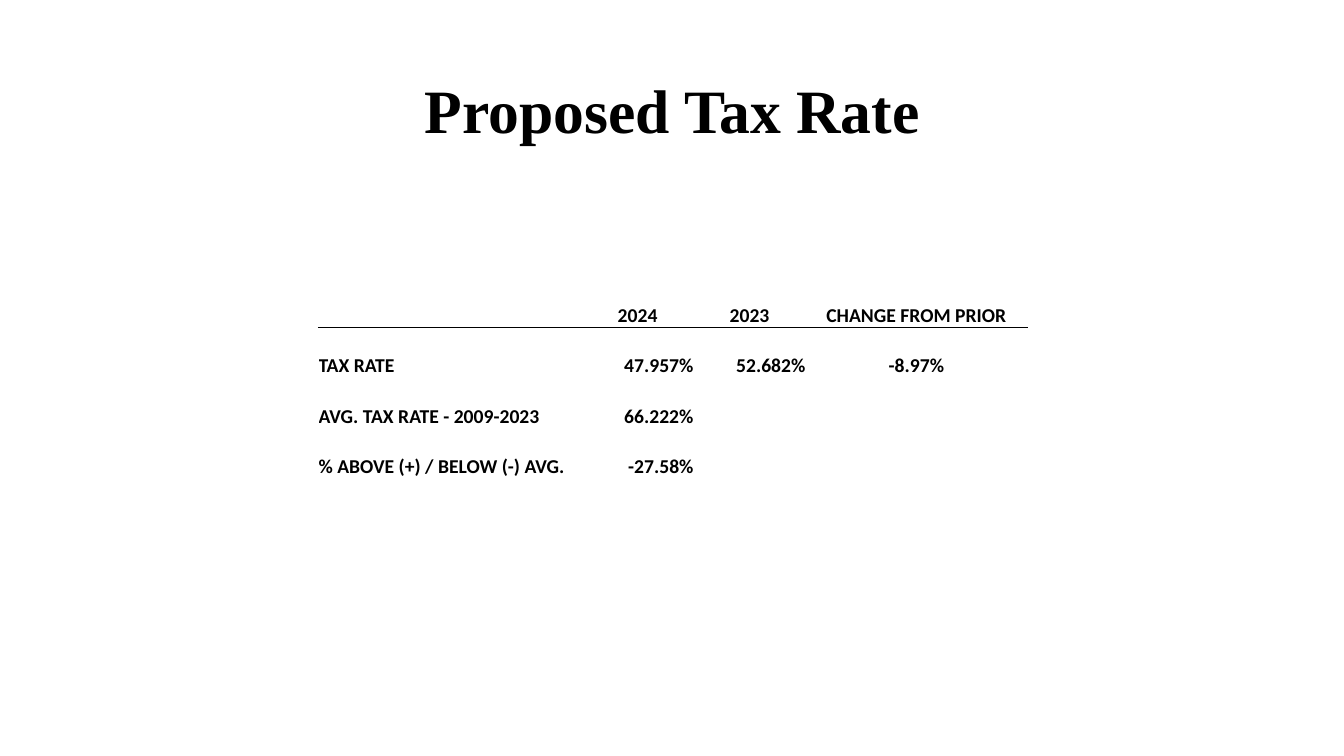
from lxml import etree
from pptx import Presentation, util as u
from pptx.dml.color import RGBColor
from pptx.enum import text
from pptx.oxml import ns

LEFT, CENTER, RIGHT = text.PP_ALIGN.LEFT, text.PP_ALIGN.CENTER, text.PP_ALIGN.RIGHT


def color(hex_value):
    return RGBColor.from_string(hex_value)


def set_all(target, values):
    for key, value in values.items():
        setattr(target, key, value)


class RateSlide:
    """Style and current slide; lengths are percentages of the slide size."""

    INK = "000000"
    TITLE_FONT = {"name": "Times New Roman", "size": u.Pt(44), "bold": True}
    TABLE_FONT = {"name": "Calibri", "size": u.Pt(14), "bold": True}
    CELL = {"margin_left": 0, "margin_right": 0, "margin_top": 0,
            "margin_bottom": 0, "vertical_anchor": text.MSO_ANCHOR.BOTTOM}

    def __init__(self, deck):
        self.width, self.height = deck.slide_width, deck.slide_height
        self.slide = deck.slides.add_slide(deck.slide_layouts[5])

    def x(self, percent):
        return round(self.width * percent / 100)

    def y(self, percent):
        return round(self.height * percent / 100)

    def line(self, paragraph, words, font, align):
        paragraph.text = words
        paragraph.alignment = align
        set_all(paragraph.font, font)
        paragraph.font.color.rgb = color(self.INK)

    def title(self, words, left, top, width, height):
        heading = self.slide.shapes.title
        set_all(heading, {"left": self.x(left), "top": self.y(top),
                          "width": self.x(width), "height": self.y(height)})
        set_all(heading.text_frame, {"word_wrap": True,
                                     "auto_size": text.MSO_AUTO_SIZE.NONE,
                                     "vertical_anchor": text.MSO_ANCHOR.MIDDLE})
        paragraph = heading.text_frame.paragraphs[0]
        self.line(paragraph, words, self.TITLE_FONT, CENTER)
        paragraph.line_spacing = 0.9

    def rule(self, cell, side):
        edge = etree.Element(ns.qn(f"a:ln{side}"), w=str(u.Pt(0.5)))
        fill = etree.SubElement(edge, ns.qn("a:solidFill"))
        etree.SubElement(fill, ns.qn("a:srgbClr"), val=self.INK)
        cell._tc.get_or_add_tcPr().insert(0, edge)

    def table(self, rows, aligns, left, top, columns, row_height):
        grid = self.slide.shapes.add_table(
            len(rows), len(columns), self.x(left), self.y(top),
            self.x(sum(columns)), self.y(row_height * len(rows))).table
        set_all(grid, {"first_row": False, "horz_banding": False})
        for column, share in zip(grid.columns, columns):
            column.width = self.x(share)
        for r, entries in enumerate(rows):
            grid.rows[r].height = self.y(row_height)
            for c in range(len(columns)):
                cell = grid.cell(r, c)
                set_all(cell, self.CELL)
                cell.fill.background()
                # The line under the header is shared by the first two rows
                if r < 2:
                    self.rule(cell, "BT"[r])
                if c < len(entries) and entries[c]:
                    align = CENTER if r == 0 else aligns[c]
                    self.line(cell.text_frame.paragraphs[0], entries[c],
                              self.TABLE_FONT, align)
        return grid


def main():
    deck = Presentation()
    deck.slide_width, deck.slide_height = u.Inches(13.33), u.Inches(7.5)
    page = RateSlide(deck)

    # Heading
    page.title("Proposed Tax Rate", 6.9, 5.33, 86.25, 19.33)

    # Rate comparison
    rates = page.table(
        [["", "2024", "2023", "CHANGE FROM PRIOR"],
         ["TAX RATE", "47.957%", "52.682%", "-8.97%"],
         ["AVG. TAX RATE - 2009-2023", "66.222%"],
         ["% ABOVE (+) / BELOW (-) AVG.", "-27.58%"]],
        [LEFT, RIGHT, RIGHT, CENTER],
        left=23.7, top=36.67,
        columns=[19.58, 8.33, 8.33, 8.25, 8.25], row_height=6.67)

    # The change from prior year spans the last two columns
    for row in range(2):
        rates.cell(row, 3).merge(rates.cell(row, 4))

    deck.save("out.pptx")


if __name__ == "__main__":
    main()
